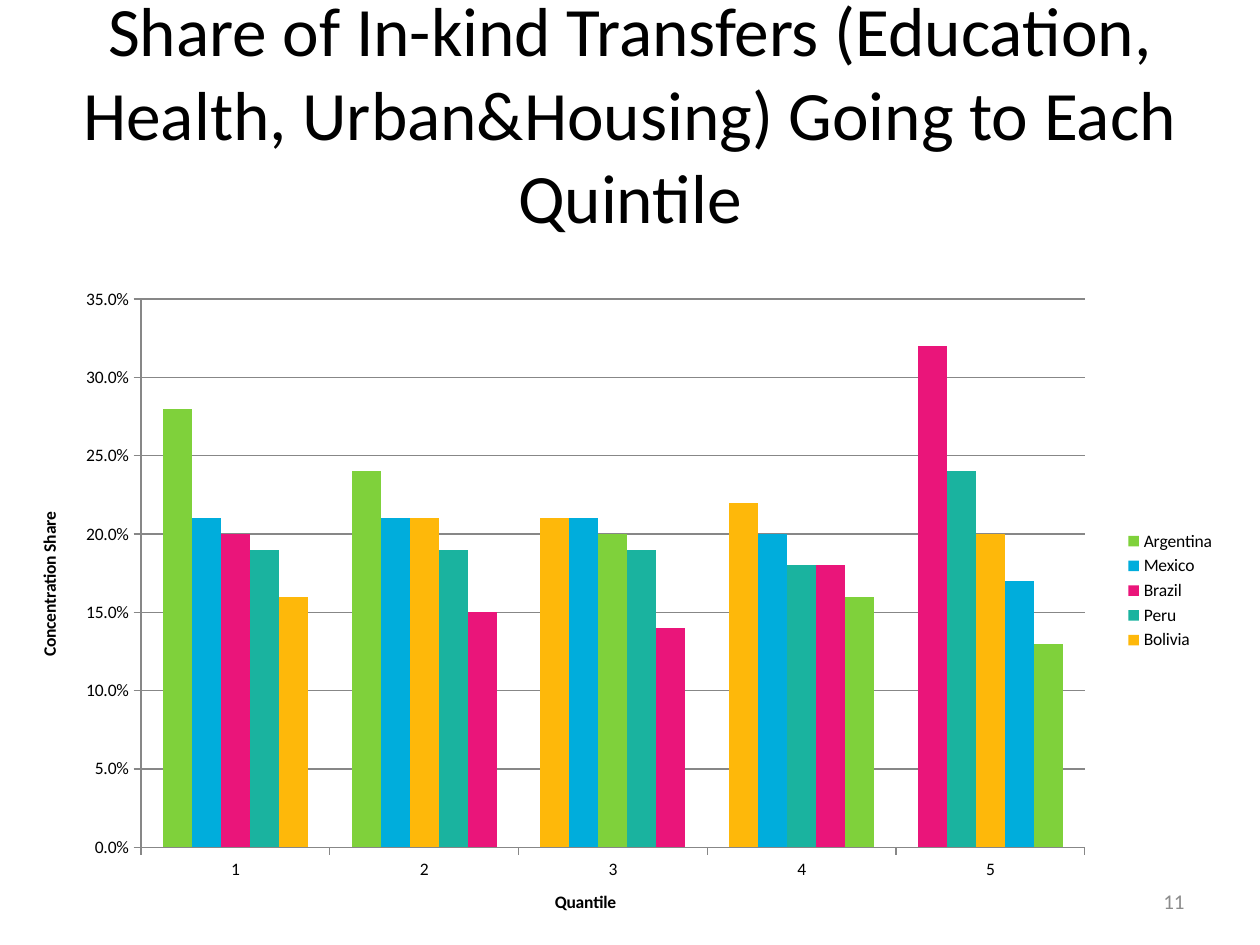
from typing import NamedTuple

from lxml.etree import SubElement
from pptx import Presentation
from pptx.chart.axis import CategoryAxis, ValueAxis
from pptx.chart.chart import Chart
from pptx.chart.data import CategoryChartData
from pptx.dml.color import RGBColor
from pptx.enum.chart import XL_CHART_TYPE, XL_LEGEND_POSITION, XL_TICK_MARK
from pptx.enum.text import MSO_ANCHOR, PP_ALIGN
from pptx.oxml.ns import qn
from pptx.slide import Slide
from pptx.text.text import Font
from pptx.util import Pt

FONT = "Calibri"
BLACK = "000000"
GREY = "8C8C8C"
AXIS_GREY = "878787"

COLORS = {
    "Argentina": "7FD13B",
    "Mexico": "00ADDC",
    "Brazil": "EA157A",
    "Peru": "1AB39F",
    "Bolivia": "FEB80A",
}


class Frame(NamedTuple):
    left: float
    top: float
    width: float
    height: float


class Label(NamedTuple):
    text: str
    frame: Frame
    size: float
    color: str
    align: PP_ALIGN


class Quintile(NamedTuple):
    name: str
    countries: list[str]  # ranked from largest share to smallest
    shares: list[float]


LABELS = [
    Label("Share of In-kind Transfers (Education, Health, Urban&Housing) "
          "Going to Each Quintile",
          Frame(0, 0, 720, 128.4), 39.6, BLACK, PP_ALIGN.CENTER),
    Label("11", Frame(516, 500.5, 168, 28.75), 12, GREY, PP_ALIGN.RIGHT),
]

QUINTILES = [
    Quintile("1", ["Argentina", "Mexico", "Brazil", "Peru", "Bolivia"],
             [0.28, 0.21, 0.20, 0.19, 0.16]),
    Quintile("2", ["Argentina", "Mexico", "Bolivia", "Peru", "Brazil"],
             [0.24, 0.21, 0.21, 0.19, 0.15]),
    Quintile("3", ["Bolivia", "Mexico", "Argentina", "Peru", "Brazil"],
             [0.21, 0.21, 0.20, 0.19, 0.14]),
    Quintile("4", ["Bolivia", "Mexico", "Peru", "Brazil", "Argentina"],
             [0.22, 0.20, 0.18, 0.18, 0.16]),
    Quintile("5", ["Brazil", "Peru", "Bolivia", "Mexico", "Argentina"],
             [0.32, 0.24, 0.20, 0.17, 0.13]),
]

CHART_FRAME = Frame(19.9, 150.8, 681.84, 373.5)
PLOT_FRAME = Frame(0.089, 0.054, 0.791, 0.839)  # fractions of the chart


def rgb(color: str) -> RGBColor:
    return RGBColor.from_string(color)


def points(frame: Frame) -> list[Pt]:
    return [Pt(length) for length in frame]


def style_font(font: Font, size: float, color: str, bold: bool = False) -> None:
    font.name = FONT
    font.size = Pt(size)
    font.bold = bold
    font.color.rgb = rgb(color)


def add_label(slide: Slide, label: Label) -> None:
    box = slide.shapes.add_textbox(*points(label.frame))
    text_frame = box.text_frame
    text_frame.word_wrap = True
    text_frame.vertical_anchor = MSO_ANCHOR.MIDDLE
    text_frame.text = label.text
    para = text_frame.paragraphs[0]
    para.alignment = label.align
    style_font(para.runs[0].font, label.size, label.color)


def style_axis(axis: CategoryAxis | ValueAxis, title: str, gridlines: bool) -> None:
    title_frame = axis.axis_title.text_frame
    title_frame.text = title
    style_font(title_frame.paragraphs[0].runs[0].font, 10, BLACK, bold=True)
    axis.major_tick_mark = XL_TICK_MARK.OUTSIDE
    axis.minor_tick_mark = XL_TICK_MARK.NONE
    axis.has_major_gridlines = gridlines
    lines = [axis.format.line]
    if gridlines:
        lines.append(axis.major_gridlines.format.line)
    for line in lines:
        line.color.rgb = rgb(AXIS_GREY)
        line.width = Pt(0.75)


def place_plot(chart: Chart, frame: Frame) -> None:
    """Fix the inner plot area inside the chart."""
    plot_area = chart._chartSpace.chart.plotArea
    for layout in plot_area.findall(qn("c:layout")):
        plot_area.remove(layout)
    layout = SubElement(plot_area, qn("c:layout"))
    plot_area.insert(0, layout)
    manual = SubElement(layout, qn("c:manualLayout"))
    settings = {"layoutTarget": "inner", "xMode": "edge", "yMode": "edge",
                **dict(zip("xywh", frame))}
    for tag, value in settings.items():
        SubElement(manual, qn(f"c:{tag}")).set("val", str(value))


def color_bars(chart: Chart) -> None:
    """Colour every bar by the country that holds that rank."""
    for rank, series in enumerate(chart.plots[0].series):
        series.invert_if_negative = False
        base = QUINTILES[0].countries[rank]
        series.format.fill.solid()
        series.format.fill.fore_color.rgb = rgb(COLORS[base])
        for index, quintile in enumerate(QUINTILES):
            country = quintile.countries[rank]
            if country != base:
                fill = series.points[index].format.fill
                fill.solid()
                fill.fore_color.rgb = rgb(COLORS[country])


def add_share_chart(slide: Slide) -> None:
    data = CategoryChartData(number_format="0.0%")
    data.categories = [quintile.name for quintile in QUINTILES]
    for rank, country in enumerate(QUINTILES[0].countries):
        data.add_series(country, [quintile.shares[rank] for quintile in QUINTILES])
    chart = slide.shapes.add_chart(
        XL_CHART_TYPE.COLUMN_CLUSTERED, *points(CHART_FRAME), data).chart
    style_font(chart.font, 10, BLACK)
    chart.has_title = False

    # Plot and bars
    plot = chart.plots[0]
    plot.gap_width = 150
    plot.overlap = 0
    plot.vary_by_categories = False
    place_plot(chart, PLOT_FRAME)
    color_bars(chart)

    # Axes
    style_axis(chart.category_axis, "Quantile", gridlines=False)
    style_axis(chart.value_axis, "Concentration Share", gridlines=True)
    chart.value_axis.minimum_scale = 0
    chart.value_axis.maximum_scale = 0.35
    chart.value_axis.major_unit = 0.05
    chart.value_axis.tick_labels.number_format = "0.0%"
    chart.value_axis.tick_labels.number_format_is_linked = False

    # Legend
    chart.has_legend = True
    chart.legend.position = XL_LEGEND_POSITION.RIGHT
    chart.legend.include_in_layout = False


def main() -> None:
    deck = Presentation()
    deck.slide_width, deck.slide_height = Pt(720), Pt(540)
    slide = deck.slides.add_slide(deck.slide_layouts[6])
    for label in LABELS:
        add_label(slide, label)
    add_share_chart(slide)
    deck.save("out.pptx")


if __name__ == "__main__":
    main()
